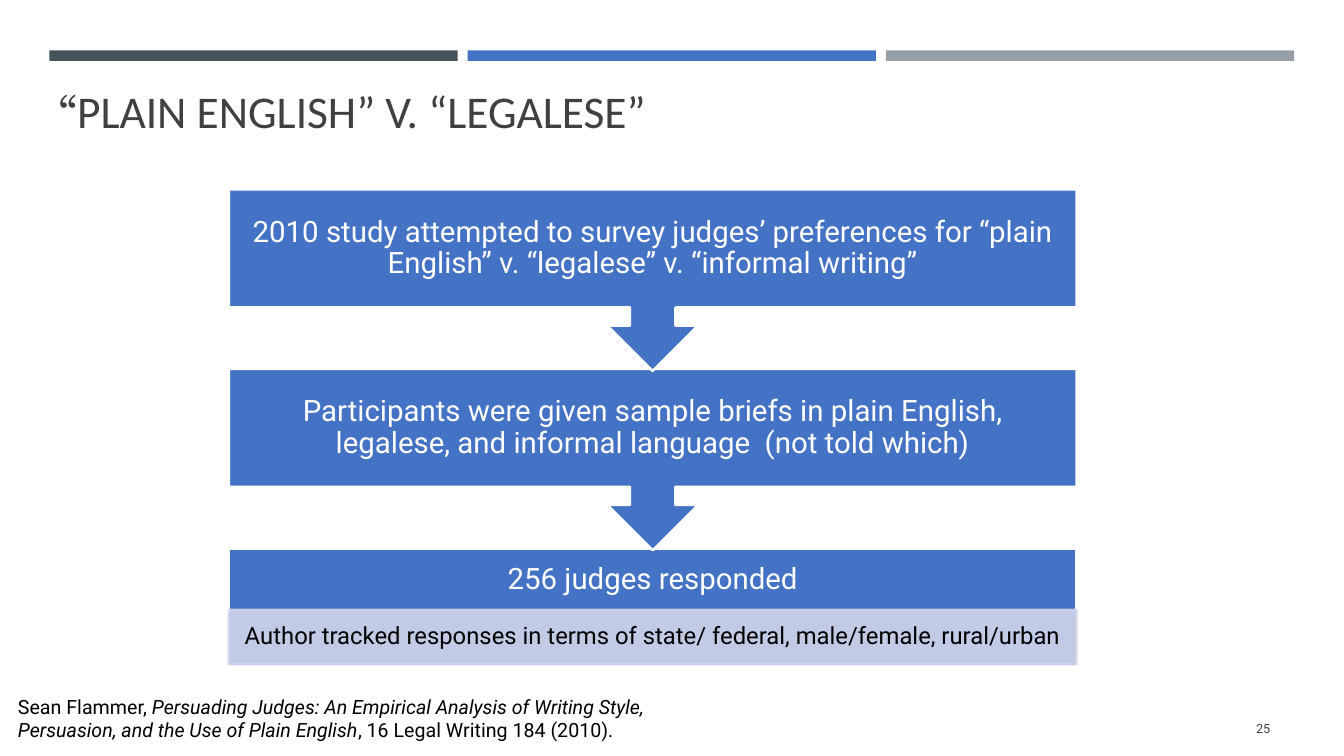
import dataclasses

import pptx
import pptx.dml.color
import pptx.enum.shapes
import pptx.enum.text
import pptx.oxml.ns
import pptx.util
from lxml import etree

SHAPE = pptx.enum.shapes.MSO_SHAPE
ALIGN = pptx.enum.text.PP_ALIGN
ANCHOR = pptx.enum.text.MSO_ANCHOR
COLUMNS, ROWS = 160, 90


@dataclasses.dataclass(frozen=True)
class Theme:
    dark: str = "465359"
    blue: str = "4472C4"
    gray: str = "969FA7"
    pale: str = "CFD5EA"
    white: str = "FFFFFF"
    black: str = "000000"
    ink: str = "404040"
    heading_font: str = "Calibri"
    quote_font: str = "TeX Gyre Schola"
    body_font: str = "Roboto"
    heading: float = 32.4
    step: float = 21
    detail: float = 17
    citation: float = 14
    number: float = 9
    outline: float = 1.75


def rgb(code):
    return pptx.dml.color.RGBColor.from_string(code)


def set_opacity(fill_parent, percent):
    for color in fill_parent.iter(pptx.oxml.ns.qn("a:srgbClr")):
        alpha = etree.SubElement(color, pptx.oxml.ns.qn("a:alpha"))
        alpha.set("val", str(percent * 1000))


def write(frame, spans, *, size, color, font, align=ALIGN.LEFT, anchor=ANCHOR.TOP,
          insets=(0.1, 0.05), spacing=None):
    """Fill a text frame with one paragraph of (text, format overrides) spans."""
    frame.word_wrap = True
    frame.auto_size = pptx.enum.text.MSO_AUTO_SIZE.NONE
    frame.vertical_anchor = anchor
    frame.margin_left = frame.margin_right = pptx.util.Inches(insets[0])
    frame.margin_top = frame.margin_bottom = pptx.util.Inches(insets[1])
    para = frame.paragraphs[0]
    para.alignment = align
    para.line_spacing = spacing
    for text, changes in spans:
        span = para.add_run()
        span.text = text
        span.font.size = pptx.util.Pt(size)
        span.font.color.rgb = rgb(color)
        span.font.name = changes.get("font", font)
        span.font.italic = changes.get("italic", False)


class Page:
    def __init__(self, deck, theme):
        self.theme = theme
        self.column = deck.slide_width / COLUMNS
        self.row = deck.slide_height / ROWS
        self.slide = deck.slides.add_slide(deck.slide_layouts[5])

    def place(self, left, top, width, height):
        """Turn grid columns and rows into slide lengths."""
        return (round(left * self.column), round(top * self.row),
                round(width * self.column), round(height * self.row))

    def title(self, area, spans):
        box = self.slide.shapes.title
        box.left, box.top, box.width, box.height = self.place(*area)
        write(box.text_frame, spans, size=self.theme.heading, color=self.theme.ink,
              font=self.theme.heading_font, insets=(0.1, 0.02))

    def block(self, area, fill, kind=SHAPE.RECTANGLE, line=None, rotation=0, opacity=100):
        shape = self.slide.shapes.add_shape(kind, *self.place(*area))
        shape.shadow.inherit = False
        shape.rotation = rotation
        shape.fill.solid()
        shape.fill.fore_color.rgb = rgb(fill)
        if line:
            shape.line.color.rgb = rgb(line)
            shape.line.width = pptx.util.Pt(self.theme.outline)
        else:
            shape.line.fill.background()
        if opacity < 100:
            set_opacity(shape.fill._xPr, opacity)

    def text(self, area, spans, **style):
        box = self.slide.shapes.add_textbox(*self.place(*area))
        write(box.text_frame, spans, **{"font": self.theme.body_font,
                                        "color": self.theme.black, **style})

    def label(self, area, text, **style):
        self.text(area, [(text, {})], align=ALIGN.CENTER, anchor=ANCHOR.MIDDLE,
                  spacing=0.9, **style)


def main():
    deck = pptx.Presentation()
    deck.slide_width = pptx.util.Inches(13.33)
    deck.slide_height = pptx.util.Inches(7.5)
    theme = Theme()
    page = Page(deck, theme)

    for index, color in enumerate((theme.dark, theme.blue, theme.gray)):
        page.block((5.88 + index * 49.8, 6, 48.6, 1.25), color)

    page.title((5.88, 9.6, 102, 11.52), [
        ("“", {"font": theme.quote_font}),
        ("PLAIN ENGLISH” V. “LEGALESE”", {}),
    ])

    left, width, first_top, pitch = 27.24, 100.92, 22.56, 21.36
    step_style = {"size": theme.step, "color": theme.white, "insets": (0.16, 0.16)}
    result_top = first_top + 2 * pitch
    page.block((left, result_top, width, 14.04), theme.blue, line=theme.white)
    page.label((left, result_top, width, 7.56), "256 judges responded", **step_style)
    detail_area = (left, 72.6, width, 6.48)
    page.block(detail_area, theme.pale, line=theme.pale, opacity=90)
    page.label(detail_area,
               "Author tracked responses in terms of state/ federal, male/female, rural/urban",
               size=theme.detail, insets=(0.13, 0.02))

    steps = (
        "2010 study attempted to survey judges’ preferences for “plain English” "
        "v. “legalese” v. “informal writing”",
        "Participants were given sample briefs in plain English, legalese, "
        "and informal language  (not told which)",
    )
    for index, text in reversed(list(enumerate(steps))):
        top = first_top + index * pitch
        page.block((left, top, width, 21.6), theme.blue, SHAPE.UP_ARROW_CALLOUT,
                   line=theme.white, rotation=180)
        page.label((left, top, width, 14.04), text, **step_style)

    page.text((0.96, 82.08, 88.2, 6.84), [
        ("Sean Flammer, ", {}),
        ("Persuading Judges: An Empirical Analysis of Writing Style, "
         "Persuasion, and the Use of Plain English", {"italic": True}),
        (", 16 Legal Writing 184 (2010).", {}),
    ], size=theme.citation)
    page.text((138.6, 84.36, 13.8, 4.8), [("25", {})], size=theme.number,
              color=theme.ink, align=ALIGN.RIGHT, anchor=ANCHOR.MIDDLE)

    deck.save("out.pptx")


if __name__ == "__main__":
    main()
